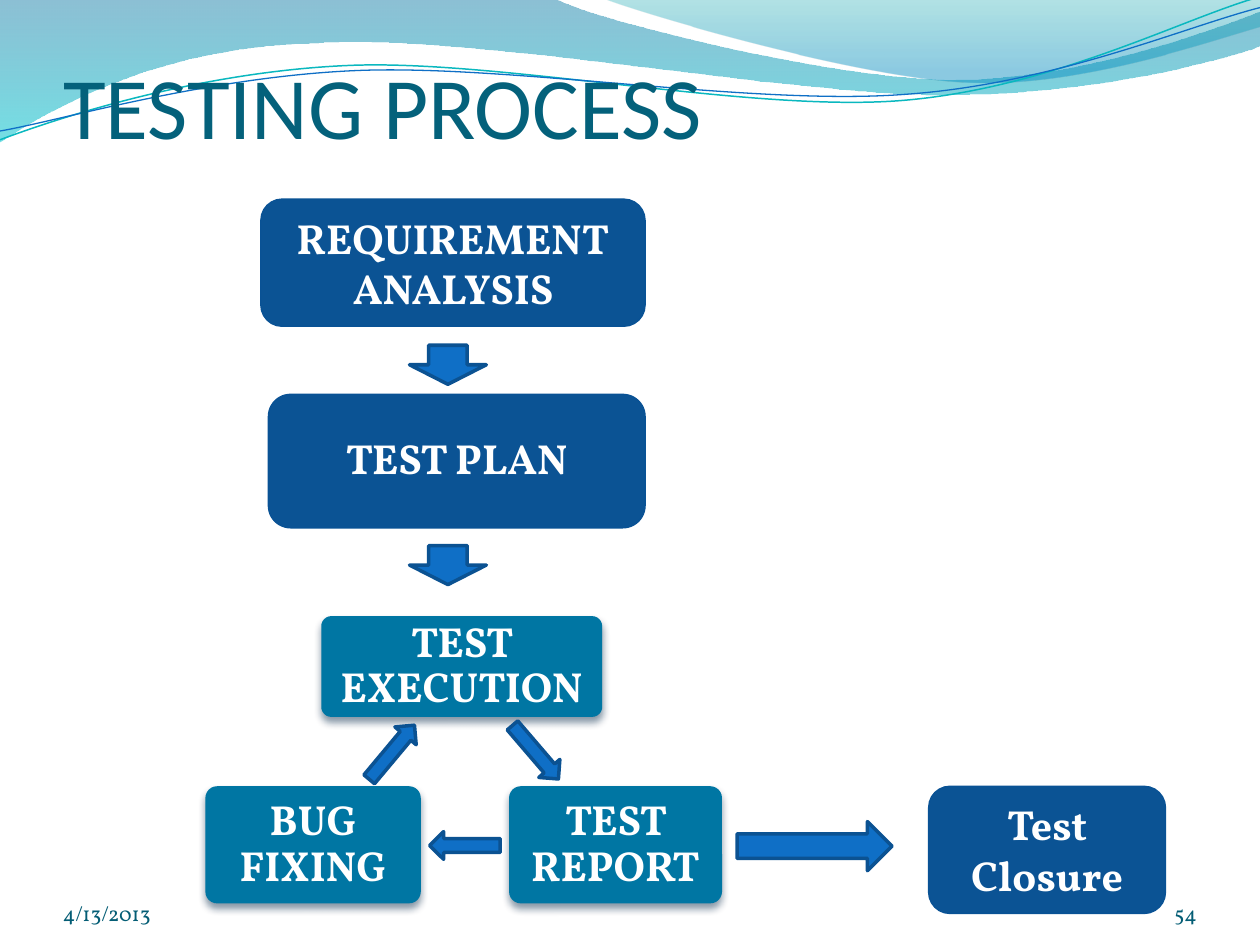
from math import cos, radians, sin
from lxml.etree import SubElement
from pptx import Presentation
from pptx.dml.color import RGBColor as RGB
from pptx.enum.shapes import MSO_SHAPE as Kind
from pptx.enum.text import MSO_ANCHOR as Anchor, PP_ALIGN as Align
from pptx.oxml.ns import qn
from pptx.util import Inches, Pt

WHITE = RGB(0xFF, 0xFF, 0xFF)
TITLE = RGB(0x04, 0x61, 0x7B)
FOOT = RGB(0x04, 0x5D, 0x75)
TEAL = RGB(0x00, 0x76, 0xA3)
NAVY = RGB(0x0B, 0x53, 0x94)
RIM = RGB(0x09, 0x52, 0x95)
BLUE = RGB(0x0F, 0x6F, 0xC6)
EDGE = RGB(0x0B, 0x52, 0x92)
AQUA = RGB(0x0A, 0xB8, 0xBF)
SEA = RGB(0x00, 0x74, 0xA1)
CYAN = RGB(0x00, 0xC6, 0xCF)
MINT = RGB(0x00, 0xA1, 0xA9)
SKY = RGB(0x00, 0x8B, 0xBF)
SHADE = RGB(0x04, 0x27, 0x47)

BANDS = [
    ((-0.01, -0.01, 10.02, 1.14),
     [(0, 0), (4.4, -0.01), (4.76, 0.17, 6.64, 0.63, 7.58, 0.63),
      (8.53, 0.63, 9.58, 0.26, 10, 0.09), (10.01, 0.36),
      (9.83, 0.44, 8.7, 0.76, 7.46, 0.75), (6.22, 0.75, 3.82, 0.28, 2.57, 0.34),
      (1.29, 0.36, 0.46, 0.83, -0.01, 1.13), (0, 0)],
     [(0, SEA, 45), (1, CYAN, 55)]),
    ((4.79, -0.01, 5.21, 0.7),
     [(4.79, -0.01), (5.09, 0.11, 6.82, 0.62, 7.69, 0.65),
      (8.56, 0.69, 9.61, 0.32, 10, 0.21), (10, 0), (4.79, -0.01)],
     [(0, MINT, 30), (0.8, SKY, 45)]),
]
LINES = [
    ((-0.02, 0.22, 10.02, 0.71),
     [(0, 1.11), (0.48, 0.93, 1.58, 0.57, 2.77, 0.52),
      (3.95, 0.47, 5.93, 0.89, 7.13, 0.8), (8.33, 0.71, 9.38, 0.15, 9.98, -0.02)],
     AQUA, 0.85),
    ((-0.02, 0.3, 10.03, 0.58),
     [(0, 1.04), (0.47, 0.96, 1.64, 0.61, 2.83, 0.56),
      (4.03, 0.51, 5.97, 0.84, 7.17, 0.75), (8.36, 0.67, 9.41, 0.21, 10, 0.06)],
     BLUE, 0.75),
]
TILT = 357.3
CYCLE = [
    ("TEST EXECUTION", (2.55, 4.89, 2.23, 0.8)),
    ("TEST REPORT", (4.04, 6.24, 1.69, 0.93)),
    ("BUG FIXING", (1.63, 6.24, 1.71, 0.93)),
]
STEPS = [
    ("REQUIREMENT\nANALYSIS", (2.07, 1.58, 3.05, 1.01), Anchor.MIDDLE, 0.05, 1.0),
    ("TEST PLAN", (2.13, 3.13, 2.99, 1.06), Anchor.MIDDLE, 0.1, 0.9),
    ("Test Closure", (7.37, 6.24, 1.88, 1.01), Anchor.TOP, 0.05, 1.0),
]
TURNS = [
    ((3.97, 5.86, 0.56, 0.22), 49.4),
    ((3.41, 6.6, 0.56, 0.22), 180),
    ((2.83, 5.86, 0.56, 0.22), 309.9),
]
FLOWS = [
    (Kind.DOWN_ARROW, (3.25, 2.74, 0.61, 0.31)),
    (Kind.RIGHT_ARROW, (5.85, 6.52, 1.23, 0.39)),
    (Kind.DOWN_ARROW, (3.25, 4.33, 0.61, 0.31)),
]
FOOTER = [
    ("4/13/2013", (0.5, 6.95, 2.33, 0.4), Align.LEFT),
    ("54", (8.67, 6.95, 0.83, 0.4), Align.RIGHT),
]
BOLD = {"name": "Vollkorn", "size": Pt(24), "bold": True}
SMALL = {"name": "Vollkorn", "size": Pt(12)}
HEAD = {"name": "Calibri", "size": Pt(50), "bold": False}


def place(shape, spot):
    for key, value in zip(("left", "top", "width", "height"), spot):
        setattr(shape, key, Inches(value))


def curve(shapes, spot, path, turn=0):
    left, top, width, height = spot
    midx, midy = left + width / 2, top + height / 2
    c, s = cos(radians(turn)), sin(radians(turn))
    dots = []
    for part in path:
        for x, y in zip(part[::2], part[1::2]):
            dx, dy = x - midx, y - midy
            dots.append((midx + dx * c + dy * s, midy - dx * s + dy * c))
    first, *rest = [(Inches(x), Inches(y)) for x, y in dots]
    pen = shapes.build_freeform(*first)
    pen.add_line_segments(rest, close=path[0] == path[-1])
    shape = pen.convert_to_shape()
    shape.shadow.inherit = False
    place(shape, spot)
    shape.rotation = turn
    track = shape.element.spPr.find(".//" + qn("a:path"))
    track.set("w", str(Inches(width)))
    track.set("h", str(Inches(height)))
    for node, (x, y) in zip(track.iter(qn("a:pt")), dots):
        node.set("x", str(Inches(x - left)))
        node.set("y", str(Inches(y - top)))
    steps = iter(track.findall(qn("a:lnTo")))
    for part in path[1:]:
        step = next(steps)
        if len(part) == 6:
            bend = SubElement(track, qn("a:cubicBezTo"))
            step.addprevious(bend)
            for old in (step, next(steps), next(steps)):
                bend.append(old[0])
                track.remove(old)
    return shape


def blend(shape, stops):
    fill = shape.fill
    fill.gradient()
    fill.gradient_angle = 270
    for stop, (spot, color, alpha) in zip(fill.gradient_stops, stops):
        stop.position = spot
        stop.color.rgb = color
    tints = shape.element.spPr.iter(qn("a:srgbClr"))
    for tint, (spot, color, alpha) in zip(tints, stops):
        SubElement(tint, qn("a:alpha"), val=str(alpha * 1000))


def block(shapes, kind, spot, color, edge=None, width=0):
    shape = shapes.add_shape(kind, *map(Inches, spot))
    shape.shadow.inherit = False
    shape.fill.solid()
    shape.fill.fore_color.rgb = color
    if edge is None:
        shape.line.fill.background()
    else:
        shape.line.color.rgb = edge
        shape.line.width = Pt(width)
    return shape


def shade(shape):
    effects = shape.element.spPr.find(qn("a:effectLst"))
    outer = SubElement(effects, qn("a:outerShdw"), blurRad=str(Pt(4.5)),
                       dist=str(Pt(3)), dir="5400000", rotWithShape="0")
    tint = SubElement(outer, qn("a:srgbClr"), val=str(SHADE))
    SubElement(tint, qn("a:alpha"), val="48000")


def write(shape, text, style, color, align, anchor, pad, gap=1.0):
    frame = shape.text_frame
    frame.text = text
    sides = ("margin_left", "margin_top", "margin_right", "margin_bottom")
    form = dict(zip(sides, map(Inches, pad)), word_wrap=True, vertical_anchor=anchor)
    for key, value in form.items():
        setattr(frame, key, value)
    for para in frame.paragraphs:
        para.alignment = align
        para.line_spacing = gap
        for run in para.runs:
            for key, value in style.items():
                setattr(run.font, key, value)
            run.font.color.rgb = color


def main():
    deck = Presentation()
    deck.slide_width, deck.slide_height = Inches(10), Inches(7.5)
    slide = deck.slides.add_slide(deck.slide_layouts[5])
    shapes = slide.shapes

    for spot, path, stops in BANDS:
        band = curve(shapes, spot, path)
        band.line.fill.background()
        blend(band, stops)
    for spot, path, color, width in LINES:
        wave = curve(shapes, spot, path, TILT)
        wave.fill.background()
        wave.line.color.rgb = color
        wave.line.width = Pt(width)

    title = shapes.title
    title.element.getparent().append(title.element)
    place(title, (0.5, 0.25, 9, 1))
    write(title, "TESTING PROCESS", HEAD, TITLE, Align.LEFT, Anchor.BOTTOM,
          (0, 0.05, 0, 0))

    for (text, spot), (site, turn) in zip(CYCLE, TURNS):
        box = block(shapes, Kind.ROUNDED_RECTANGLE, spot, TEAL)
        box.adjustments[0] = 0.1
        shade(box)
        write(box, text, BOLD, WHITE, Align.CENTER, Anchor.MIDDLE, [0.13] * 4, 0.9)
        block(shapes, Kind.RIGHT_ARROW, site, BLUE, EDGE, 2).rotation = turn
    for kind, spot in FLOWS:
        block(shapes, kind, spot, BLUE, EDGE, 2)
    for text, spot, anchor, pad, gap in STEPS:
        box = block(shapes, Kind.ROUNDED_RECTANGLE, spot, NAVY, RIM, 0.75)
        write(box, text, BOLD, WHITE, Align.CENTER, anchor, (0.1, pad, 0.1, pad), gap)
    for text, spot, align in FOOTER:
        note = shapes.add_textbox(*map(Inches, spot))
        write(note, text, SMALL, FOOT, align, Anchor.BOTTOM, [0] * 4)

    deck.save("out.pptx")


if __name__ == "__main__":
    main()
